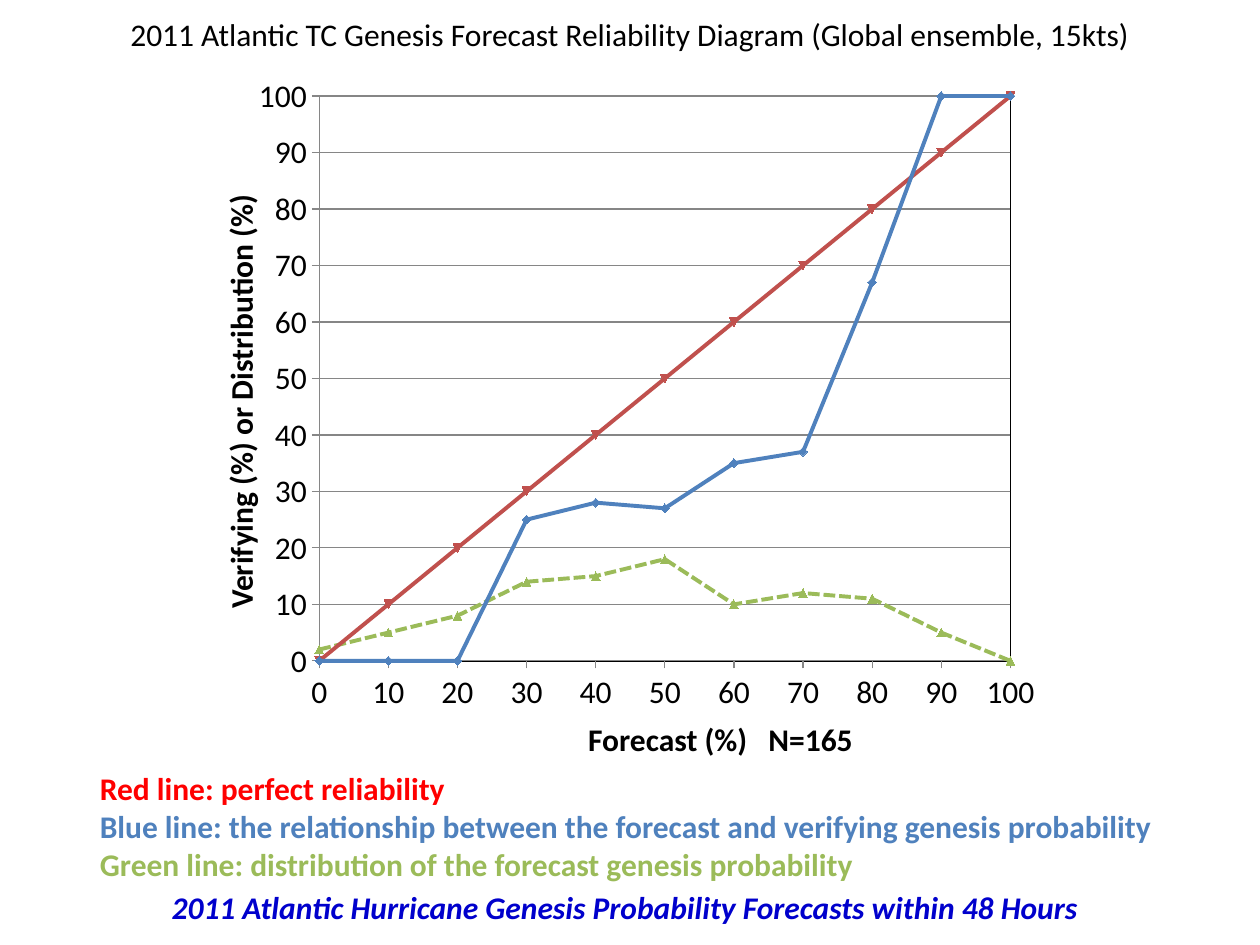
import pptx
import pptx.chart.data
import pptx.dml.color
import pptx.enum.chart
import pptx.enum.dml
import pptx.enum.text
import pptx.oxml
import pptx.oxml.ns
import pptx.util

Pt = pptx.util.Pt
MARK = pptx.enum.chart.XL_MARKER_STYLE
DASH = pptx.enum.dml.MSO_LINE
TICK = pptx.enum.chart.XL_TICK_MARK

FONT = "Calibri"
SIZE = 18
HUES = {"black": "000000", "red": "FF0000", "blue": "4F81BD", "brick": "C0504D",
        "green": "9BBB59", "navy": "0000CC", "grey": "868686"}

TITLE = "2011 Atlantic TC Genesis Forecast Reliability Diagram (Global ensemble, 15kts)"
TITLE_BOX = (36, 3, 648, 33)
CHART_BOX = (139, 36, 462, 378)
PLOT = {"x": 0.094, "y": 0.05, "w": 0.855, "h": 0.854}

STEPS = range(0, 101, 10)
# name, values, colour, marker, dash
LINES = [
    ("Series 1", [0, 0, 0, 25, 28, 27, 35, 37, 67, 100, 100], "blue", MARK.DIAMOND, DASH.SOLID),
    ("Series 2", list(STEPS), "brick", MARK.AUTOMATIC, DASH.SOLID),
    ("Series 3", [2, 5, 8, 14, 15, 18, 10, 12, 11, 5, 0], "green", MARK.TRIANGLE, DASH.SQUARE_DOT),
]

# box, lines of (text, colour), wrap, rotation, italic
NOTES = [
    ((329, 408, 168, 29), [("Forecast (%)   N=165", "black")], True, 0, False),
    ((11, 214, 253, 29), [("Verifying (%) or Distribution (%)", "black")], False, 270, False),
    ((50, 436, 620, 73), [
        ("Red line: perfect reliability", "red"),
        ("Blue line: the relationship between the forecast and verifying genesis probability", "blue"),
        ("Green line: distribution of the forecast genesis probability", "green"),
    ], False, 0, False),
    ((91, 504, 538, 29),
     [("2011 Atlantic Hurricane Genesis Probability Forecasts within 48 Hours", "navy")],
     False, 0, True),
]


def put(item, **values):
    for name, value in values.items():
        setattr(item, name, value)


def rgb(hue):
    return pptx.dml.color.RGBColor.from_string(HUES[hue])


def style(font, hue="black", **values):
    put(font, name=FONT, size=Pt(SIZE), **values)
    font.color.rgb = rgb(hue)


def stroke(line, hue, width):
    line.color.rgb = rgb(hue)
    line.width = Pt(width)


def add_title(slide):
    title = slide.shapes.title
    put(title, **dict(zip(("left", "top", "width", "height"), map(Pt, TITLE_BOX))))
    frame = title.text_frame
    frame.text = TITLE
    put(frame, vertical_anchor=pptx.enum.text.MSO_ANCHOR.MIDDLE, word_wrap=True,
        auto_size=pptx.enum.text.MSO_AUTO_SIZE.NONE)
    frame.paragraphs[0].alignment = pptx.enum.text.PP_ALIGN.CENTER
    style(frame.paragraphs[0].runs[0].font)


def fix_plot(chart):
    """Pin the inner plot area and give it a thin black border."""
    area = chart._chartSpace.chart.plotArea
    for old in area.findall(pptx.oxml.ns.qn("c:layout")):
        area.remove(old)
    spots = "".join(f'<c:{key}Mode val="edge"/>' for key in "xy")
    spots += "".join(f'<c:{key} val="{val}"/>' for key, val in PLOT.items())
    area.insert(0, pptx.oxml.parse_xml(
        f'<c:layout {pptx.oxml.ns.nsdecls("c")}><c:manualLayout>'
        f'<c:layoutTarget val="inner"/>{spots}</c:manualLayout></c:layout>'))
    area.append(pptx.oxml.parse_xml(
        f'<c:spPr {pptx.oxml.ns.nsdecls("c", "a")}><a:noFill/><a:ln w="9525"><a:solidFill>'
        f'<a:srgbClr val="{HUES["black"]}"/></a:solidFill></a:ln></c:spPr>'))


def add_chart(slide):
    data = pptx.chart.data.XyChartData()
    for name, values, *_ in LINES:
        row = data.add_series(name)
        for x, y in zip(STEPS, values):
            row.add_data_point(x, y)
    kind = pptx.enum.chart.XL_CHART_TYPE.XY_SCATTER_LINES
    chart = slide.shapes.add_chart(kind, *map(Pt, CHART_BOX), data).chart
    put(chart, has_legend=False, has_title=False)
    style(chart.font)
    chart.plots[0].vary_by_categories = False
    for axis, grid in ((chart.category_axis, False), (chart.value_axis, True)):
        put(axis, minimum_scale=0, maximum_scale=100, major_unit=10,
            has_major_gridlines=grid, has_title=False,
            major_tick_mark=TICK.OUTSIDE, minor_tick_mark=TICK.NONE)
        put(axis.tick_labels, number_format="General", number_format_is_linked=False)
        stroke(axis.format.line, "grey", 0.75)
        if grid:
            stroke(axis.major_gridlines.format.line, "grey", 0.75)
    for row, (_, _, hue, mark, dash) in zip(chart.plots[0].series, LINES):
        row.smooth = False
        stroke(row.format.line, hue, 2.25)
        row.format.line.dash_style = dash
        put(row.marker, style=mark, size=5)
        row.marker.format.fill.solid()
        row.marker.format.fill.fore_color.rgb = rgb(hue)
        stroke(row.marker.format.line, hue, 0.75)
    fix_plot(chart)


def add_note(slide, box, lines, wrap, turn, slant):
    shape = slide.shapes.add_textbox(*map(Pt, box))
    shape.rotation = turn
    frame = shape.text_frame
    put(frame, word_wrap=wrap, auto_size=pptx.enum.text.MSO_AUTO_SIZE.SHAPE_TO_FIT_TEXT)
    for index, (text, hue) in enumerate(lines):
        para = frame.add_paragraph() if index else frame.paragraphs[0]
        run = para.add_run()
        run.text = text
        style(run.font, hue, bold=True, italic=slant)


def main():
    deck = pptx.Presentation()
    put(deck, slide_width=Pt(720), slide_height=Pt(540))
    slide = deck.slides.add_slide(deck.slide_layouts[5])
    add_title(slide)
    add_chart(slide)
    for note in NOTES:
        add_note(slide, *note)
    deck.save("out.pptx")


if __name__ == "__main__":
    main()
